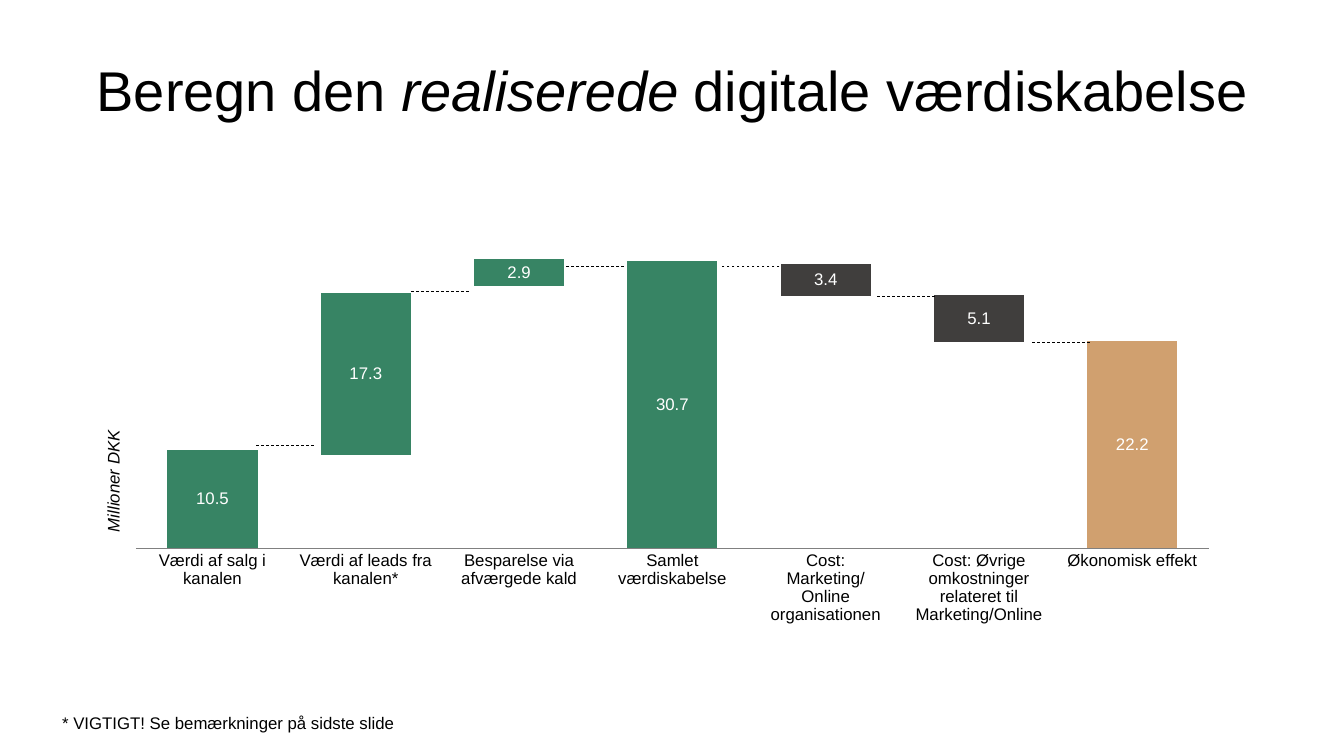
from lxml import etree
from pptx import Presentation
from pptx import util as u
from pptx.chart.data import CategoryChartData
from pptx.dml.color import RGBColor
from pptx.enum import chart as ch, dml, shapes, text
from pptx.oxml import parse_xml
from pptx.oxml.ns import nsdecls, qn

Pt = u.Pt
FACE = "Arial"
COLORS = {
    "ink": "000000",
    "label": "FFFFFF",
    "axis": "808080",
    "gain": "378464",
    "cost": "403E3D",
    "net": "D0A06F",
}
BARS = [
    ("Værdi af salg i kanalen", None, 10.5, "gain"),
    ("Værdi af leads fra kanalen*", 10, 17.3, "gain"),
    ("Besparelse via afværgede kald", 28, 2.9, "gain"),
    ("Samlet værdiskabelse", None, 30.7, "gain"),
    ("Cost: Marketing/Online organisationen", 27, 3.4, "cost"),
    ("Cost: Øvrige omkostninger relateret til Marketing/Online", 22, 5.1, "cost"),
    ("Økonomisk effekt", None, 22.2, "net"),
]
LINKS = [318.2, 208.1, 190.1, 190.5, 211.7, 244.8]


def rgb(name):
    return RGBColor.from_string(COLORS[name])


def style(font, size, color="ink", italic=None):
    font.name = FACE
    font.size = Pt(size)
    font.color.rgb = rgb(color)
    if italic is not None:
        font.italic = italic


def paint(fill, color):
    fill.solid()
    fill.fore_color.rgb = rgb(color)


def add_title(slide):
    title = slide.shapes.title
    title.left, title.top, title.width, title.height = Pt(0), Pt(41.4), Pt(960), Pt(104.4)
    frame = title.text_frame
    frame.vertical_anchor = text.MSO_ANCHOR.TOP
    frame.auto_size = text.MSO_AUTO_SIZE.NONE
    para = frame.paragraphs[0]
    para.alignment = text.PP_ALIGN.CENTER
    para.line_spacing = 0.9
    style(para.font, 40)
    for words, slant in (("Beregn den ", False), ("realiserede", True),
                         (" digitale værdiskabelse", False)):
        run = para.add_run()
        run.text = words
        run.font.italic = slant


def set_plot(chart, x, y, w, h):
    area = chart._chartSpace.chart.plotArea
    for old in area.findall(qn("c:layout")):
        area.remove(old)
    layout = parse_xml(f"<c:layout {nsdecls('c')}><c:manualLayout/></c:layout>")
    for tag, val in (("layoutTarget", "inner"), ("xMode", "edge"), ("yMode", "edge"),
                     ("x", x), ("y", y), ("w", w), ("h", h)):
        etree.SubElement(layout[0], qn("c:" + tag)).set("val", str(val))
    area.insert(0, layout)


def add_bars(slide):
    data = CategoryChartData(number_format="0.0")
    names, bases, values, fills = zip(*BARS)
    data.categories = names
    data.add_series("Series 1", bases)
    data.add_series("Series 2", values)
    chart = slide.shapes.add_chart(ch.XL_CHART_TYPE.COLUMN_STACKED, Pt(81.1), Pt(151.9),
                                   Pt(798.5), Pt(299.5), data).chart
    chart.has_legend = False
    chart.has_title = False
    style(chart.font, 12)
    set_plot(chart, 0.02, 0.02, 0.96, 0.78)

    axis = chart.category_axis
    axis.major_tick_mark = ch.XL_TICK_MARK.NONE
    axis.format.line.color.rgb = rgb("axis")
    axis.format.line.width = Pt(0.5)
    scale = chart.value_axis
    scale.minimum_scale, scale.maximum_scale = 0, 35
    scale.has_major_gridlines = False
    scale.visible = False

    plot = chart.plots[0]
    plot.gap_width, plot.overlap = 70, 100
    plot.vary_by_categories = False
    base, main_bar = plot.series
    base.format.fill.background()
    base.format.line.fill.background()
    paint(main_bar.format.fill, "gain")
    for i, color in enumerate(fills):
        if color != "gain":
            paint(main_bar.points[i].format.fill, color)
    labels = main_bar.data_labels
    labels.show_value = True
    labels.position = ch.XL_LABEL_POSITION.CENTER
    labels.number_format = "0.0"
    labels.number_format_is_linked = False
    style(labels.font, 12, "label")


def add_link(slide, x, y):
    link = slide.shapes.add_connector(shapes.MSO_CONNECTOR.STRAIGHT,
                                      Pt(x), Pt(y), Pt(x - 42.5), Pt(y))
    link.line.color.rgb = rgb("ink")
    link.line.width = Pt(0.5)
    link.line.dash_style = dml.MSO_LINE.DASH
    etree.SubElement(link._element.spPr, qn("a:effectLst"))


def add_note(slide, words, x, y, w, turn=0, italic=None):
    box = slide.shapes.add_textbox(Pt(x), Pt(y), Pt(w), Pt(21.8))
    box.rotation = turn
    frame = box.text_frame
    frame.word_wrap = True
    frame.auto_size = text.MSO_AUTO_SIZE.SHAPE_TO_FIT_TEXT
    frame.text = words
    style(frame.paragraphs[0].font, 12, italic=italic)


def main():
    deck = Presentation()
    deck.slide_width, deck.slide_height = Pt(960), Pt(540)
    slide = deck.slides.add_slide(deck.slide_layouts[5])
    add_title(slide)
    add_bars(slide)
    for i, y in enumerate(LINKS):
        add_link(slide, 224 + 110.9 * i, y)
    add_note(slide, "Millioner DKK", 33.3, 328.7, 95, 270, True)
    add_note(slide, "* VIGTIGT! Se bemærkninger på sidste slide", 37.3, 505.4, 352.1)
    deck.save("out.pptx")


if __name__ == "__main__":
    main()
